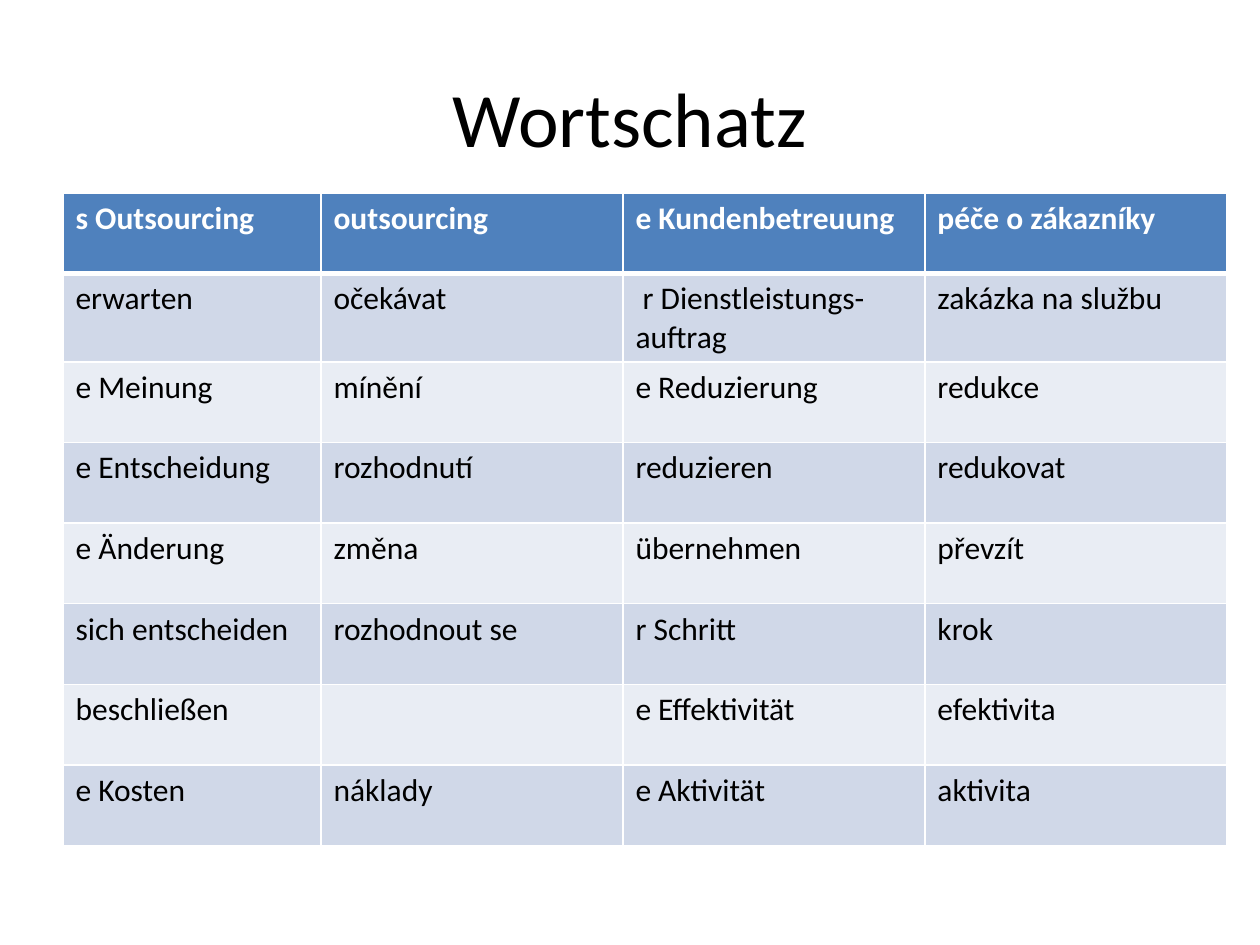
from lxml import etree
from pptx import Presentation
from pptx.dml.color import RGBColor
from pptx.enum.text import MSO_ANCHOR, PP_ALIGN
from pptx.oxml.ns import qn
from pptx.util import Emu, Pt

EMU_PER_PX = 914400 / 126
MIDDLE = MSO_ANCHOR.MIDDLE
CENTER = PP_ALIGN.CENTER

BLACK = RGBColor(0x00, 0x00, 0x00)
WHITE = RGBColor(0xFF, 0xFF, 0xFF)
HEADER_BLUE = RGBColor(0x4F, 0x81, 0xBD)
BAND_DARK = RGBColor(0xD0, 0xD8, 0xE8)
BAND_LIGHT = RGBColor(0xE9, 0xED, 0xF4)

COLUMN_WIDTHS = [258, 302, 302, 302]
VOCABULARY = [
    ["s Outsourcing", "outsourcing", "e Kundenbetreuung", "péče o zákazníky"],
    ["erwarten", "očekávat", " r Dienstleistungs-auftrag", "zakázka na službu"],
    ["e Meinung", "mínění", "e Reduzierung", "redukce"],
    ["e Entscheidung", "rozhodnutí", "reduzieren", "redukovat"],
    ["e Änderung", "změna", "übernehmen", "převzít"],
    ["sich entscheiden", "rozhodnout se", "r Schritt", "krok"],
    ["beschließen", "", "e Effektivität", "efektivita"],
    ["e Kosten", "náklady", "e Aktivität", "aktivita"],
]


def px(length):
    return Emu(round(length * EMU_PER_PX))


class SlideBuilder:
    font_name = "Calibri"
    title_size = 44
    cell_size = 18

    def __init__(self, slide):
        self.slide = slide

    def style(self, paragraph, size, color, bold=False):
        font = paragraph.font
        font.name = self.font_name
        font.size = Pt(size)
        font.bold = bold
        font.color.rgb = color

    def title(self, text, left, top, width, height):
        box = self.slide.shapes.add_textbox(px(left), px(top), px(width), px(height))
        frame = box.text_frame
        frame.word_wrap = True
        frame.vertical_anchor = MIDDLE
        frame.text = text
        heading = frame.paragraphs[0]
        heading.alignment = CENTER
        self.style(heading, self.title_size, BLACK)

    def table(self, rows, left, top, column_widths, height):
        table = self.slide.shapes.add_table(
            len(rows), len(column_widths),
            px(left), px(top), px(sum(column_widths)), px(height),
        ).table
        for column, width in zip(table.columns, column_widths):
            column.width = px(width)
        for row_index, words in enumerate(rows):
            for column_index, word in enumerate(words):
                self.cell(table.cell(row_index, column_index), word, row_index)

    def cell(self, cell, word, row_index):
        is_header = row_index == 0
        band = BAND_DARK if row_index % 2 else BAND_LIGHT
        cell.text = word
        self.style(cell.text_frame.paragraphs[0], self.cell_size,
                   WHITE if is_header else BLACK, is_header)
        self.borders(cell, top=3 if row_index == 1 else 1, bottom=3 if is_header else 1)
        cell.fill.solid()
        cell.fill.fore_color.rgb = HEADER_BLUE if is_header else band

    def borders(self, cell, top, bottom):
        properties = cell._tc.get_or_add_tcPr()
        for side, width in (("lnL", 1), ("lnR", 1), ("lnT", top), ("lnB", bottom)):
            line = etree.SubElement(properties, qn(f"a:{side}"), w=str(Pt(width)))
            fill = etree.SubElement(line, qn("a:solidFill"))
            etree.SubElement(fill, qn("a:srgbClr"), val=str(WHITE))


def main():
    presentation = Presentation()
    presentation.slide_width = px(1260)
    presentation.slide_height = px(945)
    blank_layout = presentation.slide_layouts[6]
    builder = SlideBuilder(presentation.slides.add_slide(blank_layout))
    builder.title("Wortschatz", 63, 38, 1134, 157)
    builder.table(VOCABULARY, 63, 193, COLUMN_WIDTHS, 645)
    presentation.save("out.pptx")


if __name__ == "__main__":
    main()
